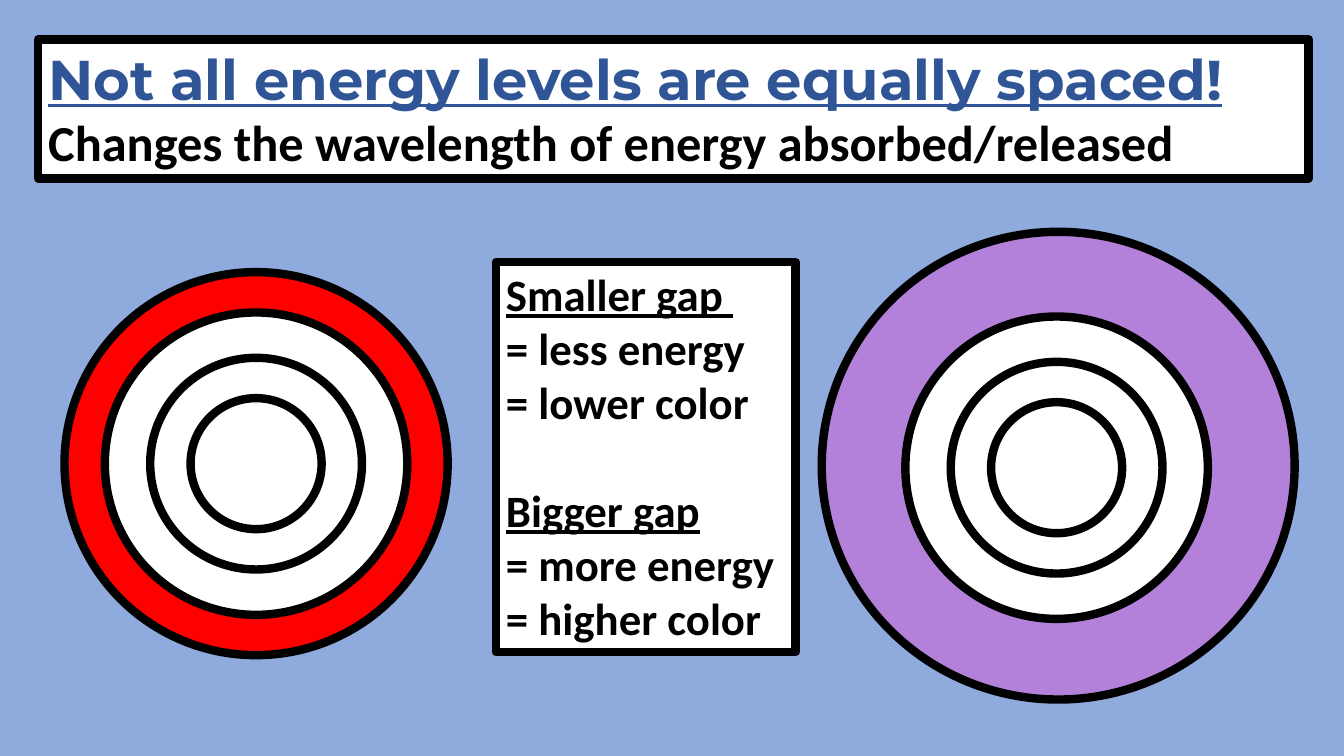
from pptx import Presentation
from pptx.dml.color import RGBColor
from pptx.enum import shapes, text
from pptx.util import Inches, Pt

BLACK, WHITE, BLUE = "000000", "FFFFFF", "2F5597"


def add_outlined(kind, left, top, width, height, fill):
    """Add a filled shape with the thick black outline used all over the slide."""
    shape = page.shapes.add_shape(
        kind, Inches(left), Inches(top), Inches(width), Inches(height))
    shape.shadow.inherit = False
    shape.fill.solid()
    shape.fill.fore_color.rgb = RGBColor.from_string(fill)
    shape.line.color.rgb = RGBColor.from_string(BLACK)
    shape.line.width = Pt(6)
    return shape


def write_lines(box, lines):
    """Fill a box with bold paragraphs: wording, size, font, colour, underline, space before."""
    frame = box.text_frame
    frame.word_wrap = True
    frame.vertical_anchor = text.MSO_ANCHOR.TOP
    for number, (wording, size, font, color, underline, gap) in enumerate(lines):
        para = frame.paragraphs[0] if number == 0 else frame.add_paragraph()
        para.alignment = text.PP_ALIGN.LEFT
        para.space_before = Pt(gap)
        span = para.add_run()
        span.text = wording
        span.font.size = Pt(size)
        span.font.name = font
        span.font.bold = True
        span.font.underline = underline
        span.font.color.rgb = RGBColor.from_string(color)


deck = Presentation()
deck.slide_width, deck.slide_height = Inches(13.33), Inches(7.5)
page = deck.slides.add_slide(deck.slide_layouts[6])
page.background.fill.solid()
page.background.fill.fore_color.rgb = RGBColor.from_string("8FAADC")

title_box = add_outlined(shapes.MSO_SHAPE.RECTANGLE, 0.38, 0.39, 12.6, 1.38, WHITE)
write_lines(title_box, [
    ("Not all energy levels are equally spaced!", 40, "Montserrat", BLUE, True, 0),
    ("Changes the wavelength of energy absorbed/released", 36, "Calibri", BLACK, False, 0),
])

# Each atom: outer ring box and colour, then the centre of its inner levels
atoms = [
    ((0.64, 2.7, 3.8, 3.8), "FF0000", 2.54, 4.6),
    ((8.15, 2.3, 4.69, 4.64), "B381D9", 10.48, 4.64),
]
for outer_ring, color, center_x, center_y in atoms:
    add_outlined(shapes.MSO_SHAPE.OVAL, *outer_ring, color)
    for diameter in (3, 2.1, 1.3):
        add_outlined(shapes.MSO_SHAPE.OVAL, center_x - diameter / 2,
                     center_y - diameter / 2, diameter, diameter, WHITE)

gap_box = add_outlined(shapes.MSO_SHAPE.RECTANGLE, 4.92, 2.6, 2.97, 3.87, WHITE)
gap_lines = [
    ("Smaller gap ", True, 0),
    ("= less energy ", False, 0),
    ("= lower color", False, 0),
    ("Bigger gap", True, 39),
    ("= more energy", False, 0),
    ("= higher color", False, 0),
]
write_lines(gap_box, [(wording, 32, "Calibri", BLACK, underline, gap)
                      for wording, underline, gap in gap_lines])

deck.save("out.pptx")
